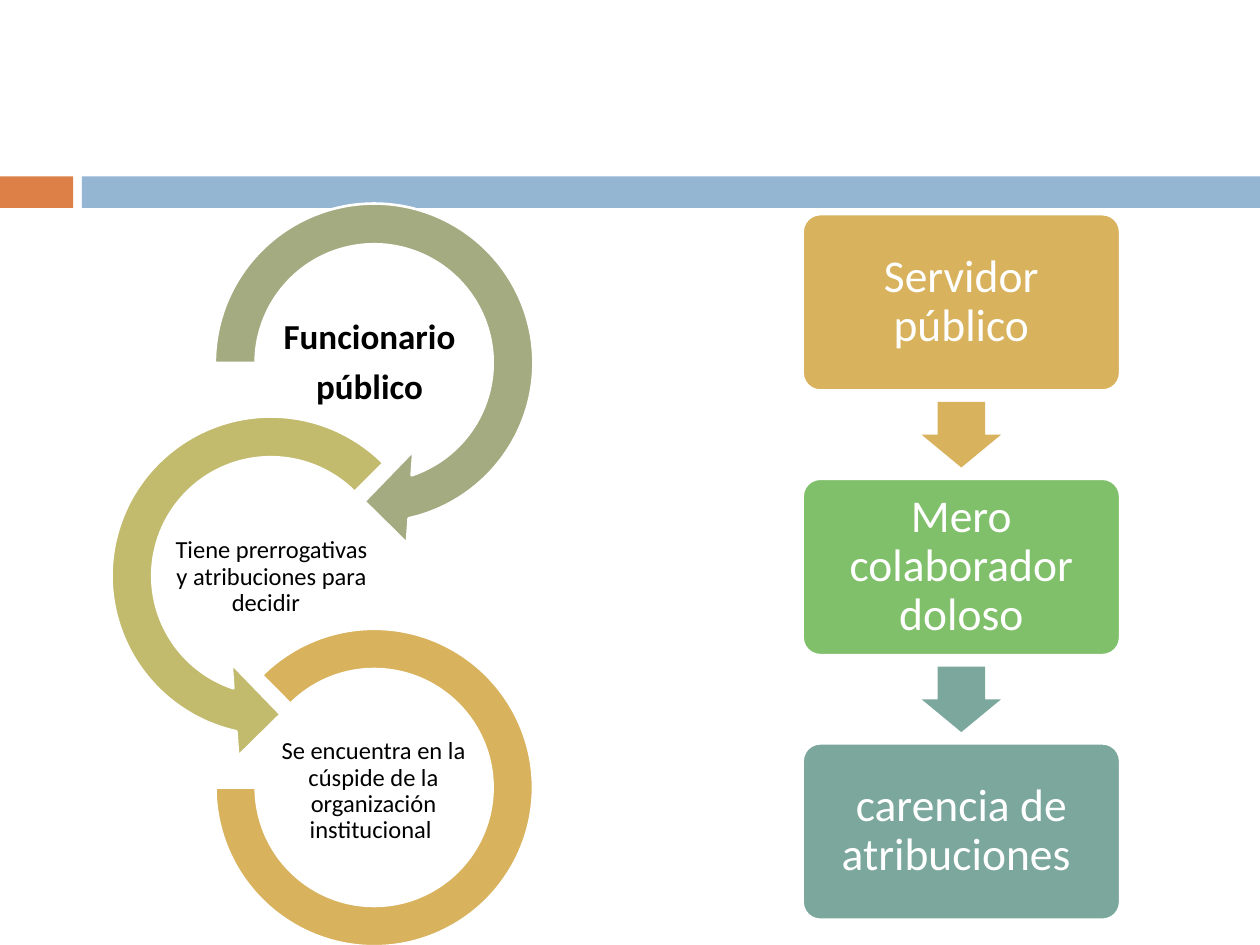
from typing import NamedTuple

from pptx import Presentation
from pptx.dml.color import RGBColor
from pptx.enum.shapes import MSO_SHAPE
from pptx.enum.text import MSO_ANCHOR, PP_ALIGN
from pptx.util import Inches, Pt

COLORS = {
    "orange": "DD8047", "blue": "94B6D2", "sage": "A5AB81", "olive": "C2BB6E",
    "gold": "D8B25C", "green": "81C06B", "teal": "7BA79D",
    "white": "FFFFFF", "black": "000000",
}
FONT = "Calibri"


class Ring(NamedTuple):
    kind: MSO_SHAPE
    left: float
    top: float
    size: float
    adj: tuple
    color: str
    text_at: tuple
    lines: tuple
    points: int
    bold: bool = False


class Step(NamedTuple):
    text: str
    color: str


RINGS = [
    Ring(MSO_SHAPE.CIRCULAR_ARROW, 1.5, 1.41, 2.94, (0.11, 11.42, 45, 108, 0.125),
         "sage", (2.15, 2.47), ("Funcionario ", "público "), 20, True),
    Ring(MSO_SHAPE.LEFT_CIRCULAR_ARROW, 0.68, 3.1, 2.94, (0.11, 11.42, 63, 189, 0.125),
         "olive", (1.34, 4.17), ("Tiene prerrogativas y atribuciones para decidir  ",), 14),
    Ring(MSO_SHAPE.BLOCK_ARC, 1.71, 4.99, 2.52, (135, 108, 0.127),
         "gold", (2.15, 5.87),
         ("Se encuentra en la cúspide de la organización institucional ",), 14),
]
STEPS = [
    Step("Servidor público", "gold"),
    Step("Mero colaborador doloso", "green"),
    Step("carencia de atribuciones ", "teal"),
]
ARROWS = ["gold", "teal"]

# Column of steps
BOX_X, BOX_Y, BOX_W, BOX_H = 6.37, 1.7, 2.52, 1.4
PITCH = 2.1
ARROW_W, ARROW_H = 0.63, 0.52


def rgb(name: str) -> RGBColor:
    return RGBColor.from_string(COLORS[name])


def add_shape(slide, kind, left: float, top: float, width: float, height: float,
              color: str, adj: tuple = (), edge: bool = False):
    shape = slide.shapes.add_shape(
        kind, Inches(left), Inches(top), Inches(width), Inches(height))
    shape.shadow.inherit = False
    shape.fill.solid()
    shape.fill.fore_color.rgb = rgb(color)
    if edge:
        shape.line.color.rgb = rgb("white")
        shape.line.width = Pt(1.5)
    else:
        shape.line.fill.background()
    for i, value in enumerate(adj):
        shape.adjustments[i] = value
    return shape


def set_text(shape, lines: tuple, points: int, color: str, inset: float,
             bold: bool = False) -> None:
    frame = shape.text_frame
    frame.text = "\n".join(lines)
    frame.word_wrap = True
    frame.vertical_anchor = MSO_ANCHOR.MIDDLE
    frame.margin_left = frame.margin_right = Inches(inset)
    frame.margin_top = frame.margin_bottom = Inches(inset)
    for para in frame.paragraphs:
        para.alignment = PP_ALIGN.CENTER
        para.line_spacing = 0.9
        para.space_after = Pt(points * 0.35)
        for run in para.runs:
            run.font.name = FONT
            run.font.size = Pt(points)
            run.font.bold = bold
            run.font.color.rgb = rgb(color)


def draw_ring(slide, ring: Ring) -> None:
    add_shape(slide, ring.kind, ring.left, ring.top, ring.size, ring.size,
              ring.color, ring.adj, edge=True)
    left, top = ring.text_at
    box = slide.shapes.add_textbox(
        Inches(left), Inches(top), Inches(1.63), Inches(0.82))
    set_text(box, ring.lines, ring.points, "black", 0.01, ring.bold)


def draw_step(slide, step: Step, top: float) -> None:
    box = add_shape(slide, MSO_SHAPE.ROUNDED_RECTANGLE, BOX_X, top, BOX_W, BOX_H,
                    step.color, (0.1,), edge=True)
    set_text(box, (step.text,), 26, "white", 0.15)


def draw_arrow(slide, color: str, top: float) -> None:
    add_shape(slide, MSO_SHAPE.DOWN_ARROW, BOX_X + (BOX_W - ARROW_W) / 2, top,
              ARROW_W, ARROW_H, color, (0.6, 0.5))


def main() -> None:
    deck = Presentation()
    deck.slide_width, deck.slide_height = Inches(10), Inches(7.5)
    slide = deck.slides.add_slide(deck.slide_layouts[6])

    # Header band
    add_shape(slide, MSO_SHAPE.RECTANGLE, 0, 1.4, 0.58, 0.25, "orange")
    add_shape(slide, MSO_SHAPE.RECTANGLE, 0.65, 1.4, 9.35, 0.25, "blue")

    # Chain of rings
    for ring in RINGS:
        draw_ring(slide, ring)

    # Steps, with an arrow centred in each gap
    for i, step in enumerate(STEPS):
        draw_step(slide, step, BOX_Y + i * PITCH)
    for i, color in enumerate(ARROWS):
        gap = BOX_Y + i * PITCH + BOX_H
        draw_arrow(slide, color, gap + (PITCH - BOX_H - ARROW_H) / 2)

    deck.save("out.pptx")


if __name__ == "__main__":
    main()
